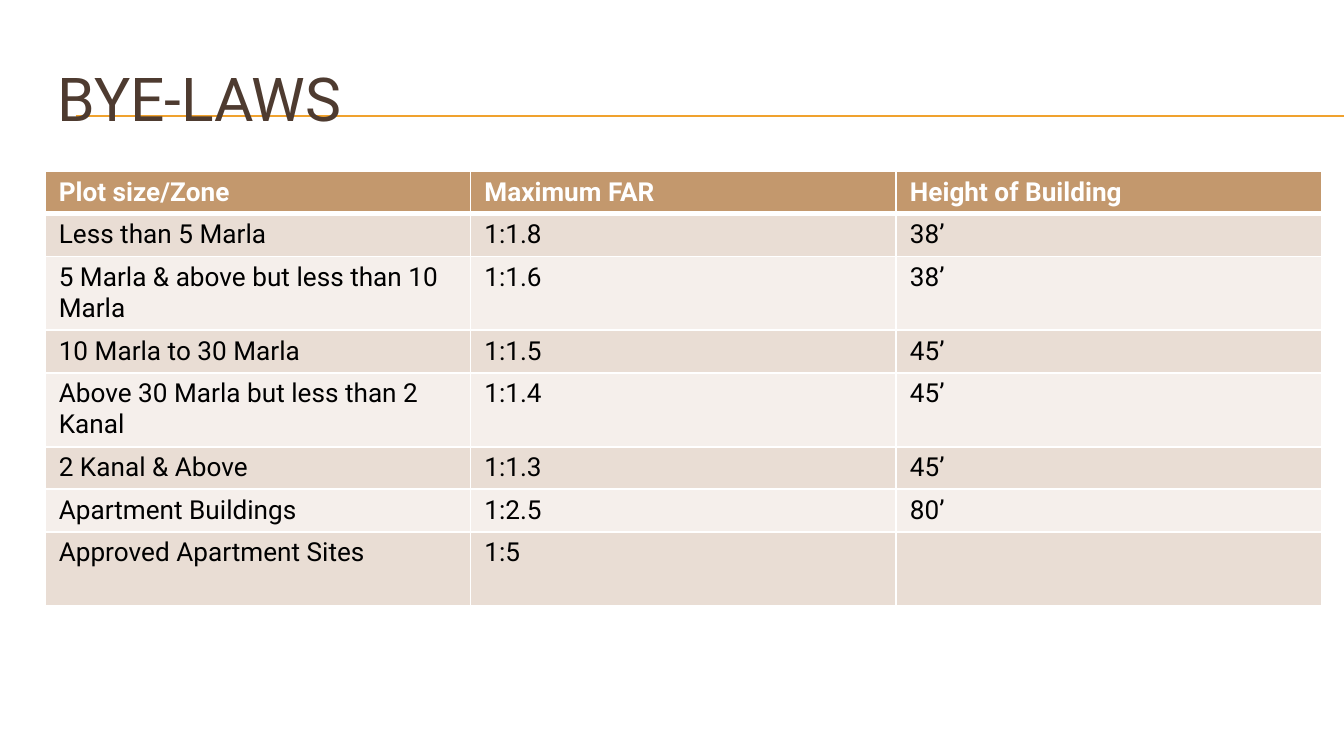
from lxml import etree
from pptx import Presentation
from pptx.dml.color import RGBColor
from pptx.enum.shapes import MSO_CONNECTOR
from pptx.enum.text import MSO_ANCHOR
from pptx.oxml.ns import qn
from pptx.util import Pt

STRAIGHT = MSO_CONNECTOR.STRAIGHT
MIDDLE = MSO_ANCHOR.MIDDLE

WHITE = RGBColor(0xFF, 0xFF, 0xFF)
BLACK = RGBColor(0, 0, 0)
BROWN = RGBColor(0x4E, 0x3B, 0x30)
AMBER = RGBColor(0xF0, 0xA2, 0x2E)
TAN = RGBColor(0xC3, 0x98, 0x6D)
BANDS = (RGBColor(0xE9, 0xDD, 0xD4), RGBColor(0xF5, 0xEF, 0xEB))

WIDTH, HEIGHT = 720, 405
LEFT, CONTENT_WIDTH = 24, 684
SINGLE, DOUBLE = 22.5, 39.5

HEADINGS = ("Plot size/Zone", "Maximum FAR", "Height of Building")
BYE_LAWS = (
    (SINGLE, "Less than 5 Marla", "1:1.8", "38’"),
    (DOUBLE, "5 Marla & above but less than 10 Marla", "1:1.6", "38’"),
    (SINGLE, "10 Marla to 30 Marla", "1:1.5", "45’"),
    (DOUBLE, "Above 30 Marla but less than 2 Kanal", "1:1.4", "45’"),
    (SINGLE, "2 Kanal & Above", "1:1.3", "45’"),
    (SINGLE, "Apartment Buildings", "1:2.5", "80’"),
    (DOUBLE, "Approved Apartment Sites", "1:5", ""),
)


class SlideBuilder:
    font_name = "Roboto"

    def __init__(self, slide):
        self.slide = slide

    def set_text(self, frame, text, size, color, bold=False):
        frame.text = text
        font = frame.paragraphs[0].font
        font.name, font.size, font.bold = self.font_name, Pt(size), bold
        font.color.rgb = color

    def rule(self, left, right, y):
        line = self.slide.shapes.add_connector(
            STRAIGHT, Pt(left), Pt(y), Pt(right), Pt(y))
        line.line.color.rgb = AMBER
        line.line.width = Pt(0.75)
        etree.SubElement(line._element.spPr, qn("a:effectLst"))

    def title(self, text, left, top, width, height):
        box = self.slide.shapes.add_textbox(
            Pt(left), Pt(top), Pt(width), Pt(height))
        frame = box.text_frame
        frame.word_wrap = True
        frame.vertical_anchor = MIDDLE
        self.set_text(frame, text, 32.4, BROWN)

    def border(self, cell, side, width):
        edge = etree.SubElement(
            cell._tc.get_or_add_tcPr(), qn(f"a:ln{side}"), w=str(Pt(width)))
        fill = etree.SubElement(edge, qn("a:solidFill"))
        etree.SubElement(fill, qn("a:srgbClr"), val=str(WHITE))

    def cell(self, cell, text, fill, color, bold, top_edge, bottom_edge):
        cell.margin_left = cell.margin_right = Pt(7.5)
        cell.margin_top = cell.margin_bottom = Pt(3)
        for side, width in zip("LRTB", (1, 1, top_edge, bottom_edge)):
            self.border(cell, side, width)
        cell.fill.solid()
        cell.fill.fore_color.rgb = fill
        self.set_text(cell.text_frame, text, 14, color, bold)

    def table(self, headings, rows, left, top, width):
        heights = [SINGLE] + [row[0] for row in rows]
        grid = self.slide.shapes.add_table(
            len(heights), len(headings),
            Pt(left), Pt(top), Pt(width), Pt(sum(heights))).table
        for column in grid.columns:
            column.width = Pt(width / len(headings))
        for row, height in zip(grid.rows, heights):
            row.height = Pt(height)
        for c, heading in enumerate(headings):
            self.cell(grid.cell(0, c), heading, TAN, WHITE, True, 1, 3)
        for r, (_, *texts) in enumerate(rows, 1):
            band = BANDS[(r - 1) % 2]
            top_edge = 3 if r == 1 else 1
            for c, text in enumerate(texts):
                self.cell(grid.cell(r, c), text, band, BLACK, False, top_edge, 1)


def main():
    deck = Presentation()
    deck.slide_width, deck.slide_height = Pt(WIDTH), Pt(HEIGHT)
    builder = SlideBuilder(deck.slides.add_slide(deck.slide_layouts[6]))

    # Double rule behind the title
    for y in (62, 62.5):
        builder.rule(40.5, WIDTH, y)

    # Title
    builder.title("BYE-LAWS", LEFT, 27.5, CONTENT_WIDTH, 49.5)

    # Limits by plot size
    builder.table(HEADINGS, BYE_LAWS, LEFT, 91.75, CONTENT_WIDTH)

    deck.save("out.pptx")


if __name__ == "__main__":
    main()
